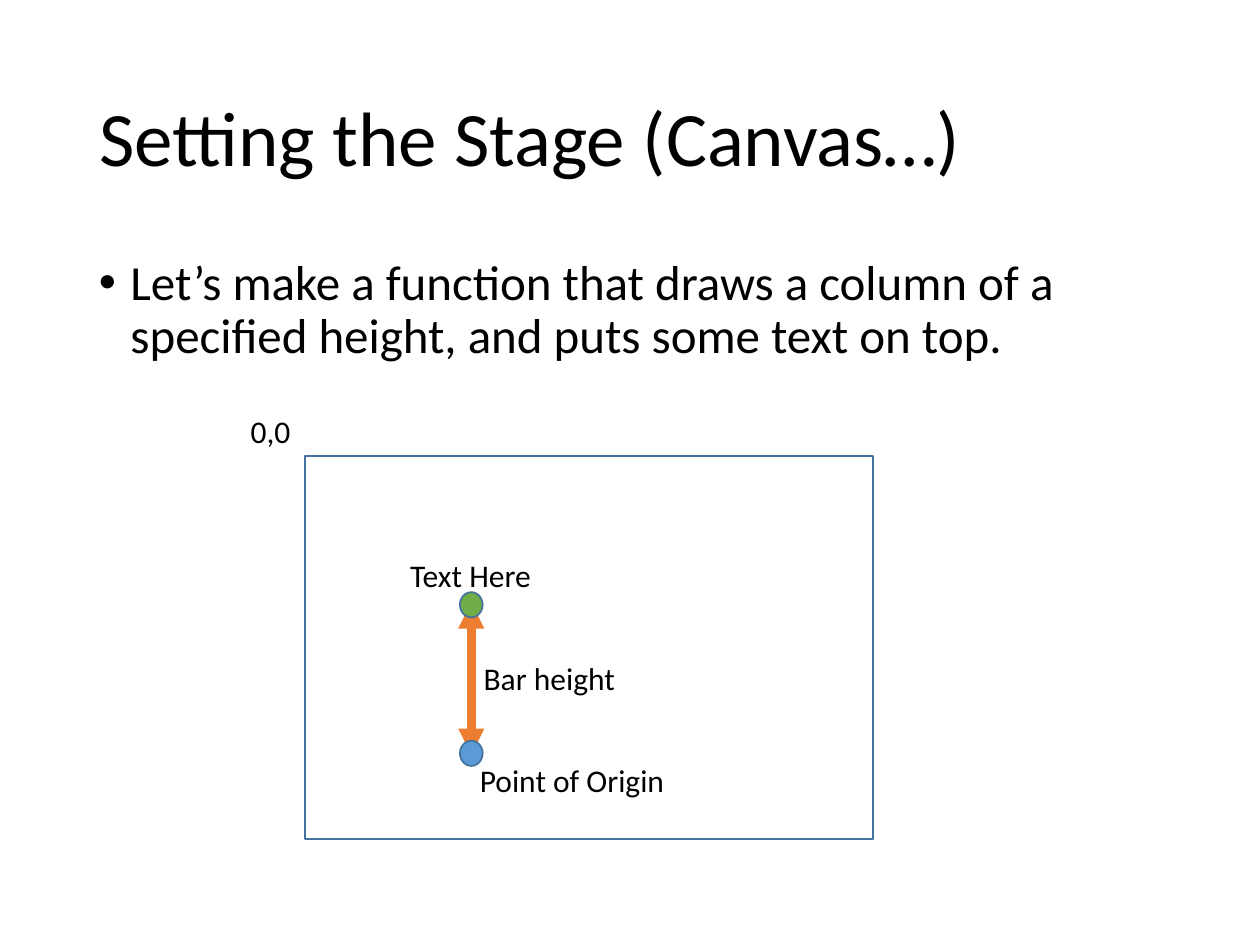
from pptx import Presentation
from pptx.dml.color import RGBColor
from pptx.enum import shapes, text
from pptx.oxml.ns import qn
from pptx.util import Pt
from lxml import etree

# Content
TITLE = "Setting the Stage (Canvas…)"
BULLET = "Let’s make a function that draws a column of a specified height, and puts some text on top."
TITLE_BOX = (49.5, 28.75, 621, 104.4)
BODY_BOX = (49.5, 144, 621, 342.7)
CANVAS = (174.25, 260.65, 324.7, 218.9)
BAR_X, BAR_TOP, BAR_BOTTOM = 269.3, 344.2, 431.3
DOT_W, DOT_H = 13, 14.4
DOTS = [(430.5, "origin"), (345.6, "tip")]  # centre height, colour
LABELS = [  # text, left, top, width, alignment
    ("0,0", 136.1, 231.8, 37.4, "LEFT"),
    ("Point of Origin", 267.1, 431.3, 121, "LEFT"),
    ("Bar height", 269.3, 373, 90.7, "LEFT"),
    ("Text Here", 226.8, 313.9, 84.2, "CENTER"),
]
LABEL_H = 29.1

THEME = {
    "font": "Calibri", "title": 44, "body": 28, "label": 18,
    "ink": "000000", "outline": "43739E", "bar": "ED7D31",
    "origin": "5B9BD5", "tip": "70AD47",
}


def color(name):
    return RGBColor.from_string(THEME[name])


def write(tf, words, size, align="LEFT"):
    tf.text = words
    p = tf.paragraphs[0]
    p.alignment = text.PP_ALIGN[align]
    font = p.runs[0].font
    font.name, font.size = THEME["font"], Pt(THEME[size])
    font.color.rgb = color("ink")
    return p


def add_outlined(slide, kind, box, fill=None):
    sp = slide.shapes.add_shape(kind, *map(Pt, box))
    sp.shadow.inherit = False
    sp.line.color.rgb = color("outline")
    sp.line.width = Pt(1)
    if fill:
        sp.fill.solid()
        sp.fill.fore_color.rgb = color(fill)
    else:
        sp.fill.background()


def add_bar(slide):
    bar = slide.shapes.add_connector(
        shapes.MSO_CONNECTOR.STRAIGHT,
        Pt(BAR_X), Pt(BAR_TOP), Pt(BAR_X), Pt(BAR_BOTTOM))
    bar.line.color.rgb = color("bar")
    bar.line.width = Pt(5)
    ln = bar.line._get_or_add_ln()
    for end in ("a:headEnd", "a:tailEnd"):
        etree.SubElement(ln, qn(end), type="triangle")
    etree.SubElement(bar._element.spPr, qn("a:effectLst"))


def main():
    prs = Presentation()
    prs.slide_width, prs.slide_height = Pt(720), Pt(540)
    slide = prs.slides.add_slide(prs.slide_layouts[5])

    # Title
    title = slide.shapes.title
    title.left, title.top, title.width, title.height = map(Pt, TITLE_BOX)
    title.text_frame.vertical_anchor = text.MSO_ANCHOR.MIDDLE
    write(title.text_frame, TITLE, "title").line_spacing = 0.9

    # Bullet
    tf = slide.shapes.add_textbox(*map(Pt, BODY_BOX)).text_frame
    tf.word_wrap = True
    p = write(tf, BULLET, "body")
    p.line_spacing, p.space_before = 0.9, Pt(10)
    pPr = p._p.get_or_add_pPr()
    pPr.set("marL", str(Pt(18)))
    pPr.set("indent", str(Pt(-18)))
    etree.SubElement(pPr, qn("a:buFont"), typeface="Arial")
    etree.SubElement(pPr, qn("a:buChar"), char="•")

    # Canvas, bar and its end points
    add_outlined(slide, shapes.MSO_SHAPE.RECTANGLE, CANVAS)
    add_bar(slide)
    for y, fill in DOTS:
        box = (BAR_X - DOT_W / 2, y - DOT_H / 2, DOT_W, DOT_H)
        add_outlined(slide, shapes.MSO_SHAPE.OVAL, box, fill)

    # Labels
    for words, left, top, width, align in LABELS:
        tf = slide.shapes.add_textbox(Pt(left), Pt(top), Pt(width), Pt(LABEL_H)).text_frame
        tf.word_wrap = False
        tf.auto_size = text.MSO_AUTO_SIZE.SHAPE_TO_FIT_TEXT
        write(tf, words, "label", align)

    prs.save("out.pptx")


if __name__ == "__main__":
    main()
